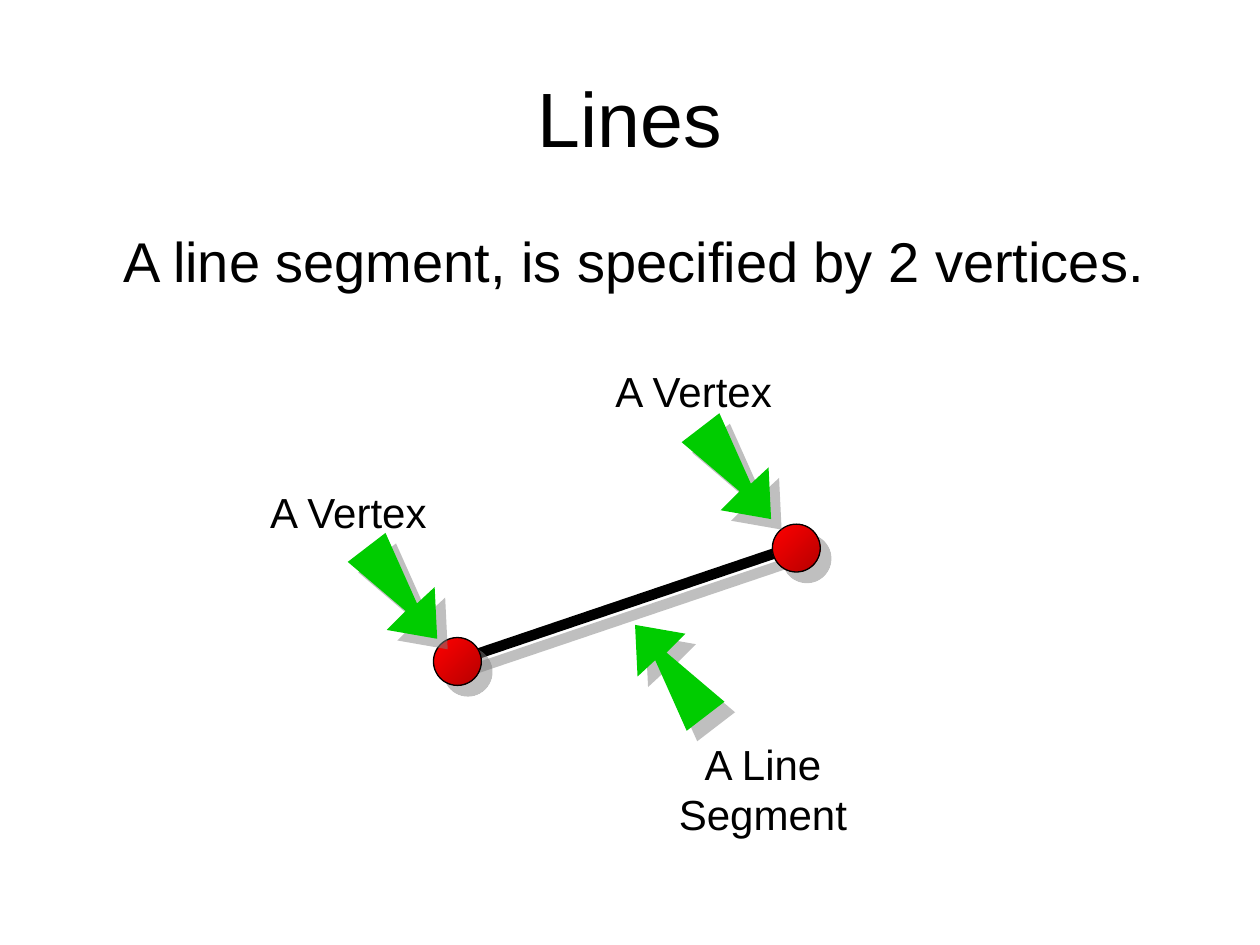
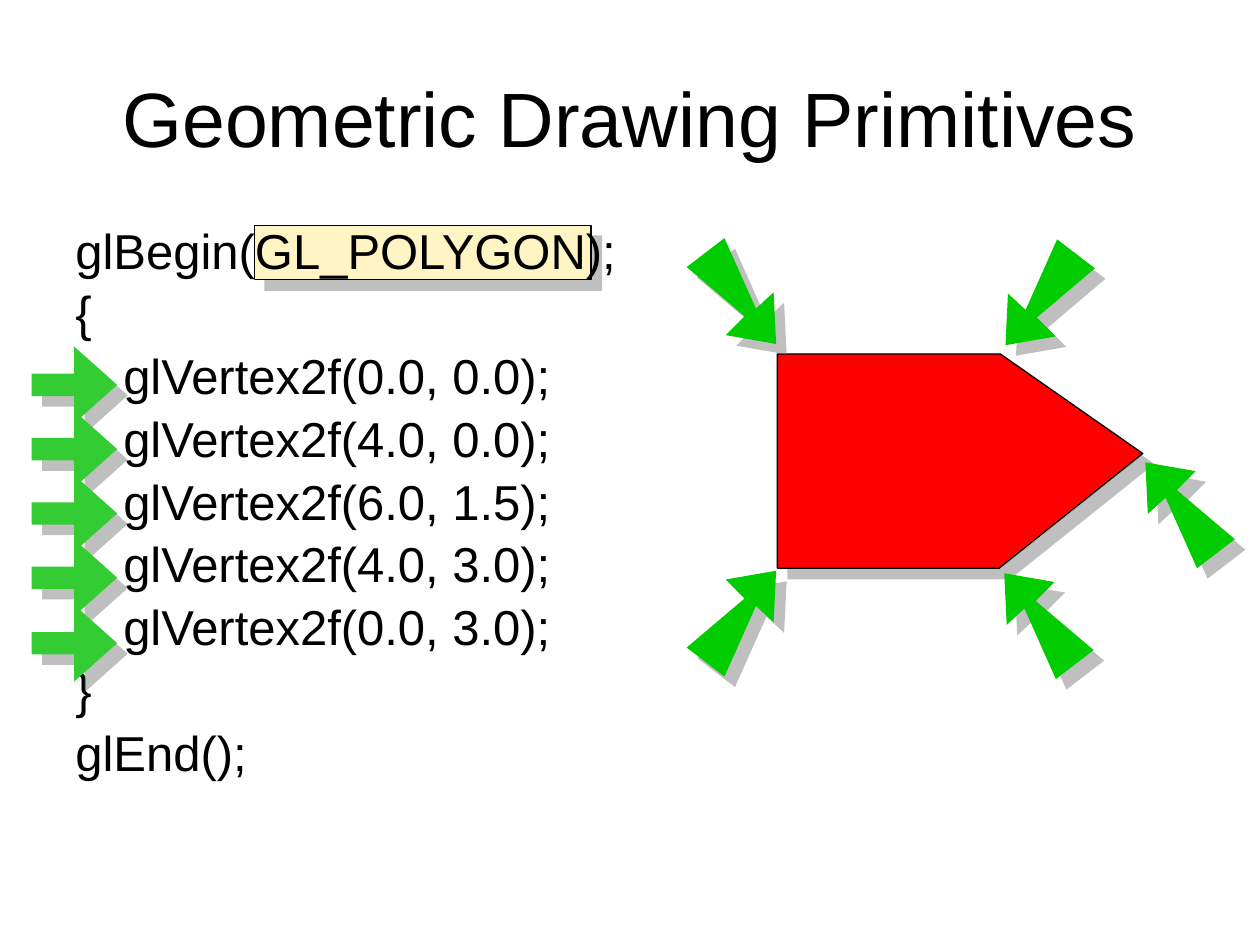
from dataclasses import dataclass

from pptx import Presentation
from pptx.dml.color import RGBColor
from pptx.enum.shapes import MSO_CONNECTOR, MSO_SHAPE
from pptx.enum.text import MSO_ANCHOR, MSO_AUTO_SIZE, PP_ALIGN
from pptx.oxml import parse_xml
from pptx.util import Pt

PX = 9144  # EMU per px, 100 px to the inch


@dataclass(frozen=True)
class Theme:
    font: str = "Arial"
    ink: RGBColor = RGBColor(0x00, 0x00, 0x00)
    pointer: RGBColor = RGBColor(0x00, 0xCC, 0x00)
    code_arrow: RGBColor = RGBColor(0x33, 0xCC, 0x33)
    highlight: RGBColor = RGBColor(0xFF, 0xF4, 0xC3)
    red: RGBColor = RGBColor(0xFF, 0x00, 0x00)
    dark_red: RGBColor = RGBColor(0xB6, 0x00, 0x00)
    shadow: str = "808080"
    title_size: int = 44
    body_size: int = 32
    code_size: int = 28
    label_size: int = 24


theme = Theme()
SHADOW_XML = f"""
<a:effectLst xmlns:a="http://schemas.openxmlformats.org/drawingml/2006/main">
  <a:outerShdw dist="107950" dir="2700000" algn="ctr" rotWithShape="0">
    <a:srgbClr val="{theme.shadow}"><a:alpha val="50000"/></a:srgbClr>
  </a:outerShdw>
</a:effectLst>"""
POINTER_OUTLINE = [(-71, -61), (-25, -22), (-40, -7), (0, 0),
                   (-2, -41), (-16, -28), (-41, -84)]


def decorate(shape, fill=None, line_width=None):
    """Give a shape its fill, its outline and the drop shadow all drawings share."""
    if fill is not None:
        shape.fill.solid()
        shape.fill.fore_color.rgb = fill
    if line_width is None:
        shape.line.fill.background()
    else:
        shape.line.color.rgb = theme.ink
        shape.line.width = Pt(line_width)
    shape.element.spPr.append(parse_xml(SHADOW_XML))


def add_outline(slide, points, fill, line_width=None):
    """Draw a closed, filled polygon through points given in px."""
    builder = slide.shapes.build_freeform(*points[0], scale=PX)
    builder.add_line_segments(points[1:], close=True)
    decorate(builder.convert_to_shape(), fill, line_width)


presentation = Presentation()
presentation.slide_width = 1000 * PX
presentation.slide_height = 750 * PX
title_only = presentation.slide_layouts[5]
lines_slide = presentation.slides.add_slide(title_only)
polygon_slide = presentation.slides.add_slide(title_only)

# Highlight behind the primitive's name
highlight = polygon_slide.shapes.add_shape(
    MSO_SHAPE.RECTANGLE, 202 * PX, 179 * PX, 267 * PX, 43 * PX)
decorate(highlight, theme.highlight, 0.75)

# Text: slide, role, box, paragraphs
vertices = ["0.0, 0.0", "4.0, 0.0", "6.0, 1.5", "4.0, 3.0", "0.0, 3.0"]
vertex_calls = [f"glVertex2f({vertex});" for vertex in vertices]
code = ["glBegin(GL_POLYGON);", "{", *vertex_calls, "}", "glEnd();"]
title_box = (50, 30, 900, 125)
texts = [
    (lines_slide, "title", title_box, ["Lines"]),
    (polygon_slide, "title", title_box, ["Geometric Drawing Primitives"]),
    (lines_slide, "body", (50, 175, 900, 495),
     ["A line segment, is specified by 2 vertices."]),
    (polygon_slide, "code", (50, 175, 465, 495), code),
    (lines_slide, "label", (474, 285, 153, 50), ["A Vertex"]),
    (lines_slide, "label", (200, 381, 153, 50), ["A Vertex"]),
    (lines_slide, "label", (522, 581, 167, 90), ["A Line Segment"]),
]
paragraph_formats = {
    "title": {"alignment": PP_ALIGN.CENTER},
    "body": {"alignment": PP_ALIGN.LEFT},
    "code": {"alignment": PP_ALIGN.LEFT, "line_spacing": 0.9},
    "label": {"alignment": PP_ALIGN.CENTER},
}
sizes = {"title": theme.title_size, "body": theme.body_size,
         "code": theme.code_size, "label": theme.label_size}

for slide, role, box, lines in texts:
    left, top, width, height = (length * PX for length in box)
    if role == "title":
        shape = slide.shapes.title
        shape.left, shape.top, shape.width, shape.height = left, top, width, height
    else:
        shape = slide.shapes.add_textbox(left, top, width, height)
    frame = shape.text_frame
    frame_format = {
        "word_wrap": True,
        "auto_size": MSO_AUTO_SIZE.NONE,
        "vertical_anchor": MSO_ANCHOR.MIDDLE if role == "title" else MSO_ANCHOR.TOP,
    }
    for name, value in frame_format.items():
        setattr(frame, name, value)
    frame.text = "\n".join(lines)
    for number, paragraph in enumerate(frame.paragraphs):
        for name, value in paragraph_formats[role].items():
            setattr(paragraph, name, value)
        if number:
            paragraph.space_before = Pt(0.2 * sizes[role])
        if role == "body" or paragraph.text in vertex_calls:
            paragraph._p.get_or_add_pPr().set("marL", str(38 * PX))
        for run in paragraph.runs:
            font_format = {"name": theme.font, "size": Pt(sizes[role])}
            for name, value in font_format.items():
                setattr(run.font, name, value)
            run.font.color.rgb = theme.ink

# Line segment with a ball on each vertex
segment = lines_slide.shapes.add_connector(
    MSO_CONNECTOR.STRAIGHT, 361 * PX, 525 * PX, 633 * PX, 433 * PX)
decorate(segment, line_width=6)
for left, top in [(344, 506), (613, 416)]:
    ball = lines_slide.shapes.add_shape(
        MSO_SHAPE.OVAL, left * PX, top * PX, 38 * PX, 38 * PX)
    ball.fill.gradient()
    ball.fill.gradient_angle = 315
    for stop, color, position in zip(
            ball.fill.gradient_stops, (theme.red, theme.dark_red), (0, 1)):
        stop.color.rgb = color
        stop.position = position
    decorate(ball, line_width=0.75)

# Polygon, and one arrow beside each vertex call
add_outline(polygon_slide,
            [(617, 281), (794, 281), (907, 360), (793, 451), (617, 451)],
            theme.red, 0.75)
for row in range(len(vertices)):
    code_arrow = polygon_slide.shapes.add_shape(
        MSO_SHAPE.RIGHT_ARROW, 25 * PX, (275 + row * 205 // 4) * PX,
        68 * PX, 61 * PX)
    code_arrow.adjustments[0] = 0.29
    code_arrow.adjustments[1] = 0.56
    decorate(code_arrow, theme.code_arrow)

# Pointers: slide, tip, horizontal and vertical direction
pointers = [
    (lines_slide, 347, 507, 1, 1),
    (lines_slide, 612, 412, 1, 1),
    (lines_slide, 504, 496, -1, -1),
    (polygon_slide, 616, 453, 1, -1),
    (polygon_slide, 797, 455, -1, -1),
    (polygon_slide, 909, 367, -1, -1),
    (polygon_slide, 798, 274, -1, 1),
    (polygon_slide, 616, 273, 1, 1),
]
for slide, tip_x, tip_y, across, down in pointers:
    points = [(tip_x + across * x, tip_y + down * y) for x, y in POINTER_OUTLINE]
    add_outline(slide, points, theme.pointer)

presentation.save("out.pptx")
